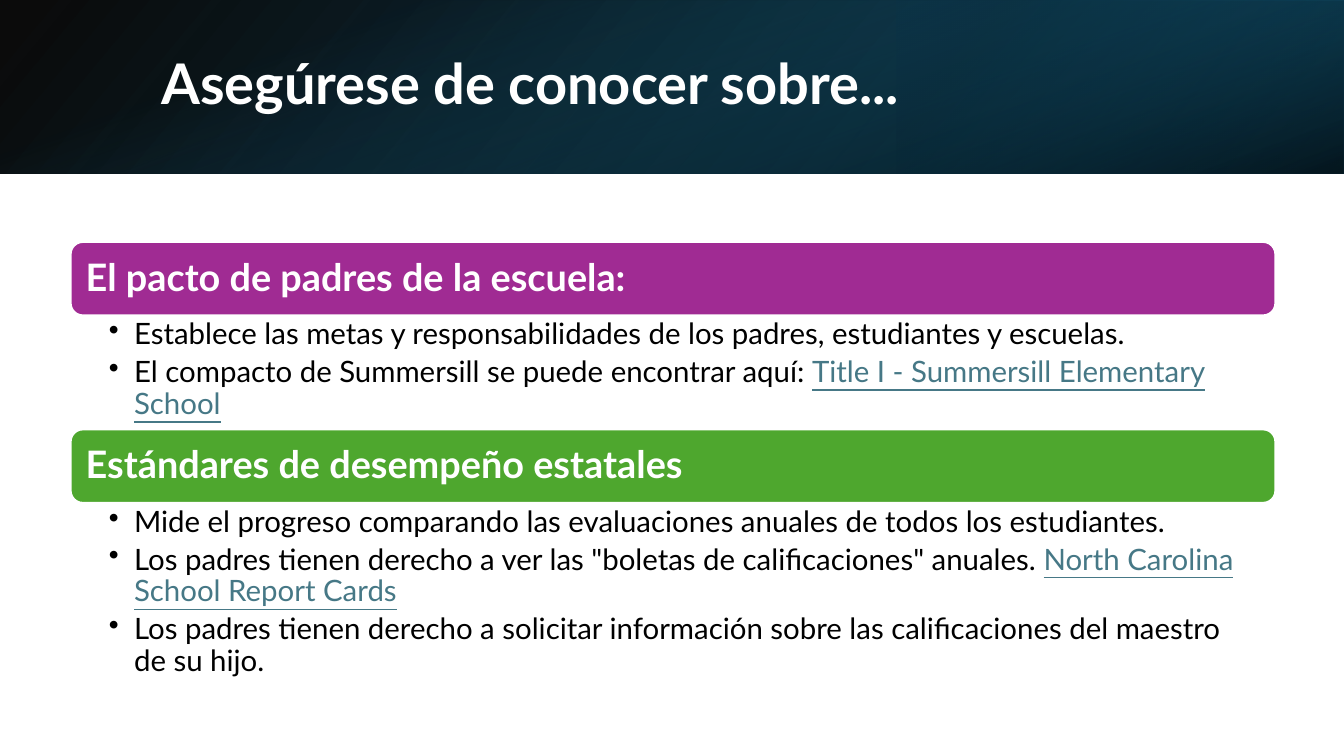
import pptx
import pptx.dml.color
import pptx.enum.shapes
import pptx.enum.text
import pptx.oxml
import pptx.oxml.ns
import pptx.util
from pptx.util import Inches

RGBColor = pptx.dml.color.RGBColor
WHITE = RGBColor(0xFF, 0xFF, 0xFF)
BLACK = RGBColor(0x00, 0x00, 0x00)
PURPLE = RGBColor(0xA0, 0x2B, 0x93)
GREEN = RGBColor(0x4E, 0xA7, 0x2E)
LINK = RGBColor(0x46, 0x78, 0x86)
NAVY = RGBColor(0x10, 0x48, 0x62)
DARK_TEAL = RGBColor(0x0B, 0x30, 0x41)
TEAL = RGBColor(0x15, 0x60, 0x82)


class SlideBuilder:
    font = "Lato"
    line_spacing = 0.9

    def __init__(self, slide):
        self.slide = slide

    def shape(self, kind, left, top, width, height):
        shape = self.slide.shapes.add_shape(
            kind, Inches(left), Inches(top), Inches(width), Inches(height))
        shape.shadow.inherit = False
        return shape

    def gradient(self, left, top, width, height, stops, angle, rotation=0, flip=False):
        panel = self.shape(pptx.enum.shapes.MSO_SHAPE.RECTANGLE, left, top, width, height)
        panel.line.fill.background()
        panel.rotation = rotation
        properties = panel._element.spPr
        frame = properties.find(pptx.oxml.ns.qn("a:xfrm"))
        if flip:
            frame.set("flipH", "1")
        stop_xml = "".join(
            f'<a:gs pos="{position * 1000}"><a:srgbClr val="{color}">'
            f'<a:alpha val="{alpha * 1000}"/></a:srgbClr></a:gs>'
            for position, color, alpha in stops)
        fill = pptx.oxml.parse_xml(
            f'<a:gradFill {pptx.oxml.ns.nsdecls("a")} rotWithShape="1">'
            f'<a:gsLst>{stop_xml}</a:gsLst>'
            f'<a:lin ang="{angle * 60000}" scaled="0"/></a:gradFill>')
        properties.find(pptx.oxml.ns.qn("a:prstGeom")).addnext(fill)

    def text_box(self, left, top, width, height, margins, anchor):
        box = self.slide.shapes.add_textbox(
            Inches(left), Inches(top), Inches(width), Inches(height))
        frame = box.text_frame
        frame.word_wrap = True
        frame.vertical_anchor = anchor
        frame.margin_left, frame.margin_top, frame.margin_right, frame.margin_bottom = (
            Inches(margin) for margin in margins)
        return frame

    def span(self, para, text, size, color, bold=False, underline=False):
        span = para.add_run()
        span.text = text
        span.font.name = self.font
        span.font.size = pptx.util.Pt(size)
        span.font.color.rgb = color
        span.font.bold = bold
        span.font.underline = underline

    def heading(self, text, left, top, width, height, size, margins):
        frame = self.text_box(left, top, width, height, margins,
                              pptx.enum.text.MSO_ANCHOR.MIDDLE)
        para = frame.paragraphs[0]
        para.line_spacing = self.line_spacing
        self.span(para, text, size, WHITE, bold=True)

    def banner(self, text, left, top, width, height, color):
        bar = self.shape(pptx.enum.shapes.MSO_SHAPE.ROUNDED_RECTANGLE,
                         left, top, width, height)
        bar.fill.solid()
        bar.fill.fore_color.rgb = color
        bar.line.color.rgb = WHITE
        bar.line.width = pptx.util.Pt(1.5)
        inset = 0.04
        self.heading(text, left + inset, top + inset, width - 2 * inset,
                     height - 2 * inset, 27, (0.11,) * 4)

    def bullets(self, items, left, top, width, height):
        frame = self.text_box(left, top, width, height, (0.38, 0.04, 0.21, 0.04),
                              pptx.enum.text.MSO_ANCHOR.TOP)
        for index, (text, link) in enumerate(items):
            para = frame.add_paragraph() if index else frame.paragraphs[0]
            para.level = 1
            para.line_spacing = self.line_spacing
            para.space_after = pptx.util.Pt(4.2)
            properties = para._p.get_or_add_pPr()
            properties.set("marL", str(Inches(0.25)))
            properties.set("indent", str(-Inches(0.25)))
            properties.append(pptx.oxml.parse_xml(
                f'<a:buChar {pptx.oxml.ns.nsdecls("a")} char="•"/>'))
            self.span(para, text, 21, BLACK)
            if link:
                self.span(para, link, 21, LINK, underline=True)


def main():
    deck = pptx.Presentation()
    deck.slide_width = Inches(13.33)
    deck.slide_height = Inches(7.5)
    page = SlideBuilder(deck.slides.add_slide(deck.slide_layouts[6]))

    page.gradient(0, 0, 13.33, 1.72, [(0, BLACK, 96), (100, NAVY, 100)], 140, flip=True)
    page.gradient(8.89, 0, 4.44, 1.72, [(19, DARK_TEAL, 68), (100, TEAL, 79)], 320,
                  rotation=180, flip=True)
    page.gradient(5.8, -5.8, 1.72, 13.33, [(23, TEAL, 0), (99, BLACK, 74)], 340,
                  rotation=90)
    page.heading("Asegúrese de conocer sobre...", 1.5, 0.38, 10.98, 0.96, 40,
                 (0.1, 0.05, 0.1, 0.05))

    sections = [
        ("El pacto de padres de la escuela:", PURPLE, 1.13, [
            ("Establece las metas y responsabilidades de los padres, estudiantes y escuelas.", ""),
            ("El compacto de Summersill se puede encontrar aquí: ",
             "Title I - Summersill Elementary School"),
        ]),
        ("Estándares de desempeño estatales", GREEN, 1.83, [
            ("Mide el progreso comparando las evaluaciones anuales de todos los estudiantes.", ""),
            ('Los padres tienen derecho a ver las "boletas de calificaciones" anuales. ',
             "North Carolina School Report Cards"),
            ("Los padres tienen derecho a solicitar información sobre las calificaciones "
             "del maestro de su hijo.", ""),
        ]),
    ]
    left, top, width, banner_height = 0.7, 2.4, 11.95, 0.73
    for title, color, list_height, items in sections:
        page.banner(title, left, top, width, banner_height, color)
        top += banner_height
        page.bullets(items, left, top, width, list_height)
        top += list_height

    deck.save("out.pptx")


if __name__ == "__main__":
    main()
